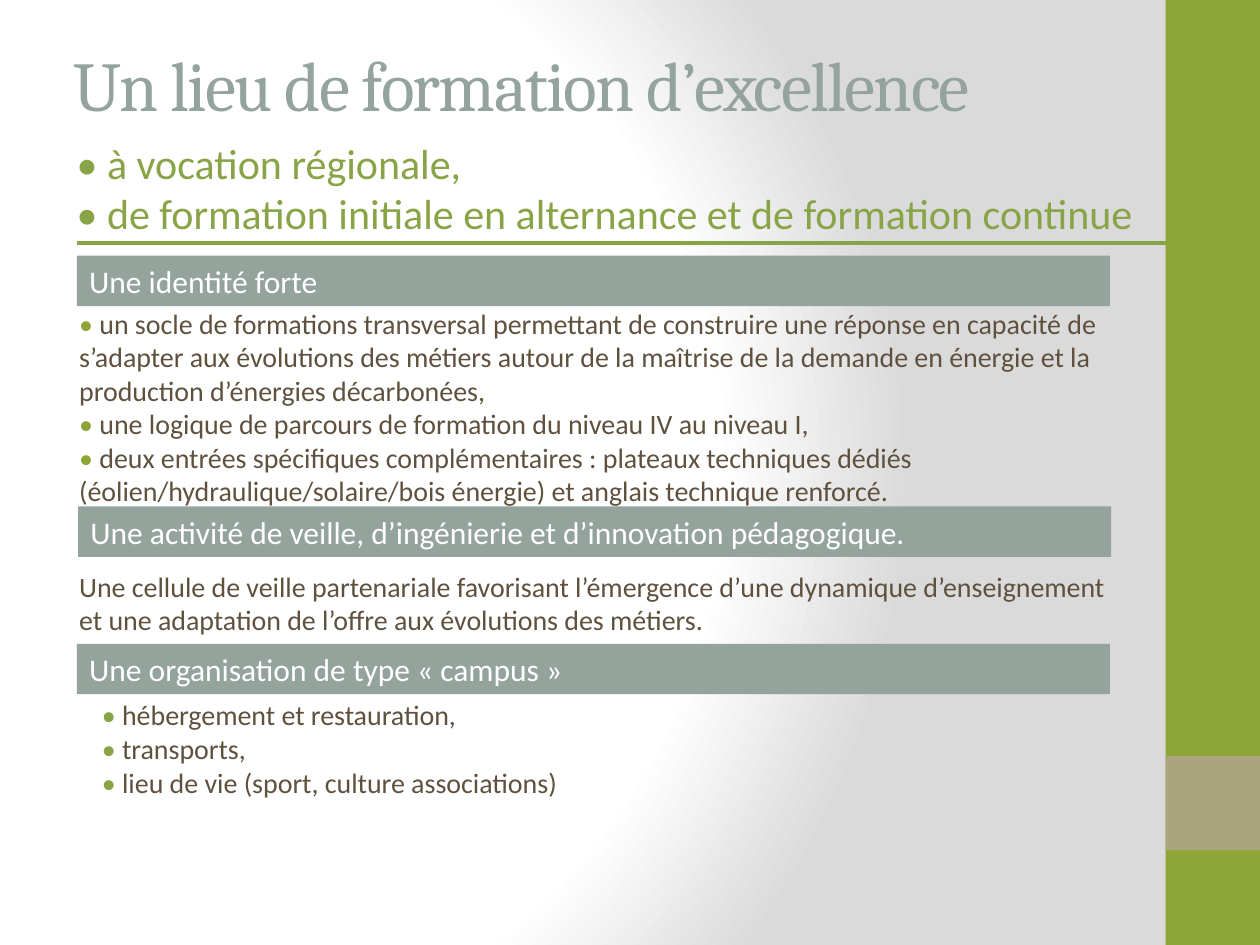
from pptx import Presentation
from pptx.dml.color import RGBColor
from pptx.enum.shapes import MSO_CONNECTOR, MSO_SHAPE
from pptx.enum.text import MSO_ANCHOR, MSO_AUTO_SIZE, PP_ALIGN
from pptx.oxml import parse_xml
from pptx.oxml.ns import nsdecls, qn
from pptx.util import Inches, Pt

GREEN = RGBColor(0x8D, 0xA5, 0x36)
LEAF = RGBColor(0x88, 0xA4, 0x47)
SAGE = RGBColor(0x95, 0xA3, 0x9D)
SAND = RGBColor(0xA9, 0xA5, 0x7C)
BROWN = RGBColor(0x5F, 0x51, 0x3E)
WHITE = RGBColor(0xFF, 0xFF, 0xFF)

DOT = "• "
TITLE = "Un lieu de formation d’excellence"
STRIPS = [(0, 7.5, GREEN), (6, 0.75, SAND)]
BANDS = [
    (0.61, 2.03, "Une identité forte"),
    (0.62, 4.02, "Une activité de veille, d’ingénierie et d’innovation pédagogique."),
    (0.61, 5.11, "Une organisation de type « campus »"),
]
TEXTS = [
    ((0.51, 1.04, 8.75, 0.91), 24, LEAF, LEAF, DOT, [
        "à vocation régionale,",
        "de formation initiale en alternance et de formation continue",
    ]),
    ((0.53, 2.38, 8.38, 1.72), 16, GREEN, BROWN, DOT, [
        "un socle de formations transversal permettant de construire une "
        "réponse en capacité de s’adapter aux évolutions des métiers autour "
        "de la maîtrise de la demande en énergie et la production d’énergies "
        "décarbonées,",
        "une logique de parcours de formation du niveau IV au niveau I,",
        "deux entrées spécifiques complémentaires : plateaux techniques dédiés "
        "(éolien/hydraulique/solaire/bois énergie) et anglais technique renforcé.",
    ]),
    ((0.53, 4.47, 8.48, 0.64), 16, BROWN, BROWN, "", [
        "Une cellule de veille partenariale favorisant l’émergence d’une "
        "dynamique d’enseignement et une adaptation de l’offre aux évolutions "
        "des métiers.",
    ]),
    ((0.71, 5.49, 4.25, 0.91), 16, LEAF, BROWN, DOT, [
        "hébergement et restauration,",
        "transports,",
        "lieu de vie (sport, culture associations)",
    ]),
]
STOPS = [(0, "FFFFFF"), (75, "FFFFFF"), (100, "DADADA")]


def add_run(para, text, size, color, font="Calibri"):
    run = para.add_run()
    run.text = text
    run.font.size = Pt(size)
    run.font.name = font
    run.font.color.rgb = color
    return run


def add_rect(slide, box, color):
    rect = slide.shapes.add_shape(MSO_SHAPE.RECTANGLE, *map(Inches, box))
    rect.shadow.inherit = False
    rect.fill.solid()
    rect.fill.fore_color.rgb = color
    rect.line.fill.background()
    return rect


def add_back(slide):
    slide.background.fill.gradient()
    old = slide.element.find(".//" + qn("a:gradFill"))
    stops = "".join(
        f'<a:gs pos="{pos * 1000}"><a:srgbClr val="{color}"/></a:gs>'
        for pos, color in STOPS
    )
    new = parse_xml(
        f'<a:gradFill {nsdecls("a")} rotWithShape="1"><a:gsLst>{stops}</a:gsLst>'
        '<a:path path="circle"><a:fillToRect l="20000" t="50000" r="100000" '
        'b="50000"/></a:path></a:gradFill>'
    )
    old.getparent().replace(old, new)


def add_title(slide):
    title = slide.shapes.title
    title.left, title.top, title.width, title.height = map(
        Inches, (0.48, 0.23, 8.33, 0.86))
    frame = title.text_frame
    frame.auto_size = MSO_AUTO_SIZE.NONE
    frame.vertical_anchor = MSO_ANCHOR.MIDDLE
    para = frame.paragraphs[0]
    para.alignment = PP_ALIGN.LEFT
    run = add_run(para, TITLE, 40, SAGE, "Cambria")
    run.font._element.set("spc", "-100")


def add_rule(slide):
    rule = slide.shapes.add_connector(
        MSO_CONNECTOR.STRAIGHT, *map(Inches, (0.61, 1.93, 9.25, 1.93)))
    rule.line.color.rgb = LEAF
    rule.line.width = Pt(2)
    rule.element.spPr.append(parse_xml(f'<a:effectLst {nsdecls("a")}/>'))


def add_text(slide, box, size, mark, color, dot, items):
    frame = slide.shapes.add_textbox(*map(Inches, box)).text_frame
    frame.word_wrap = True
    for num, item in enumerate(items):
        para = frame.add_paragraph() if num else frame.paragraphs[0]
        if dot:
            add_run(para, dot, size, mark)
        add_run(para, item, size, color)


def add_band(slide, left, top, text):
    frame = add_rect(slide, (left, top, 8.2, 0.4), SAGE).text_frame
    frame.word_wrap = True
    frame.vertical_anchor = MSO_ANCHOR.TOP
    para = frame.paragraphs[0]
    para.alignment = PP_ALIGN.LEFT
    add_run(para, text, 18, WHITE)


def main():
    deck = Presentation()
    deck.slide_width, deck.slide_height = Inches(10), Inches(7.5)
    slide = deck.slides.add_slide(deck.slide_layouts[5])
    add_back(slide)
    for top, height, color in STRIPS:
        add_rect(slide, (9.25, top, 0.75, height), color)
    add_title(slide)
    add_rule(slide)
    for text in TEXTS:
        add_text(slide, *text)
    for band in BANDS:
        add_band(slide, *band)
    deck.save("out.pptx")


if __name__ == "__main__":
    main()
